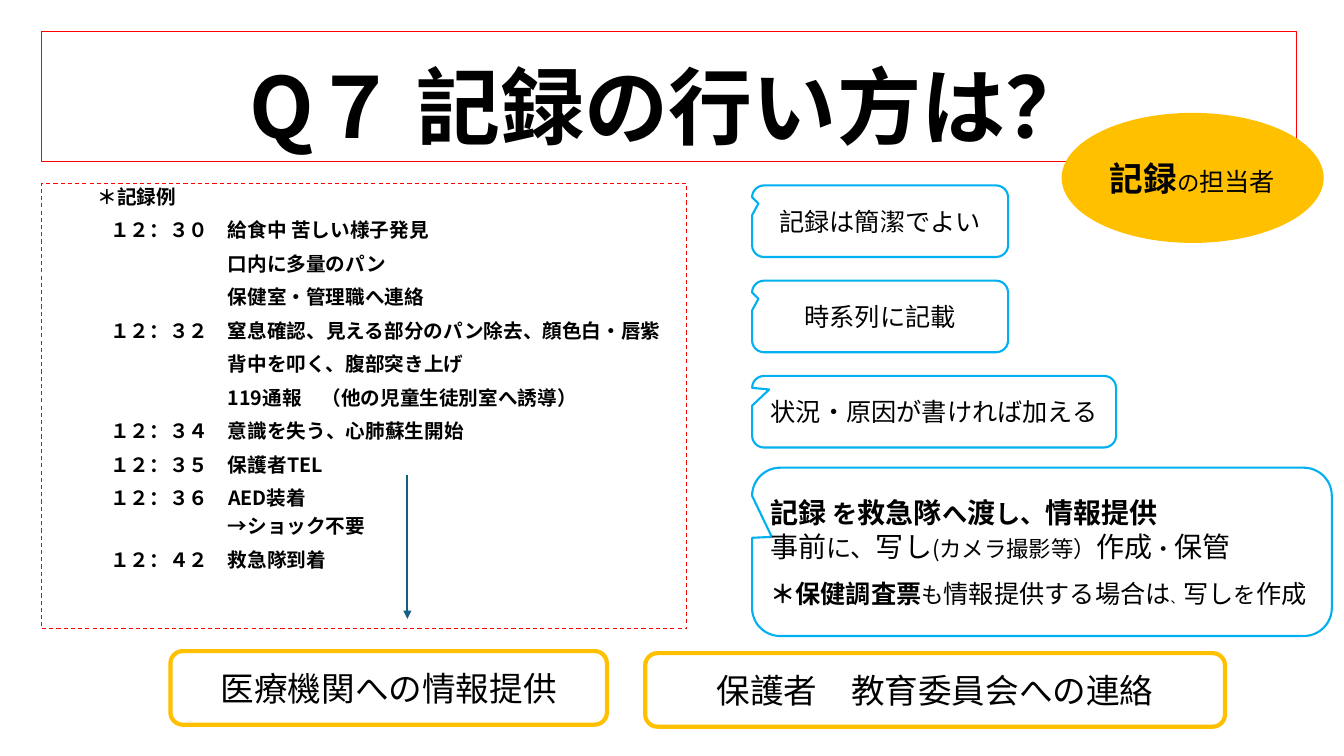
from lxml import etree
from pptx import Presentation
from pptx import util as u
from pptx.dml.color import RGBColor
from pptx.enum import dml, shapes, text
from pptx.oxml.ns import qn

FONT = "Noto Sans CJK JP"
BLACK, WHITE, RED = "000000", "FFFFFF", "FF0000"
AMBER, SKY, NAVY = "FFC000", "00B0F0", "156082"
SLIDE_W, SLIDE_H = u.Inches(13.33), u.Inches(7.5)
KIND = shapes.MSO_SHAPE
LEFT, CENTER = text.PP_ALIGN.LEFT, text.PP_ALIGN.CENTER
TOP, MIDDLE, BOTTOM = (text.MSO_ANCHOR.TOP, text.MSO_ANCHOR.MIDDLE,
                       text.MSO_ANCHOR.BOTTOM)

# Record log: (time, entry); an entry without a time continues the one above
LOG_SIZE = 14
LOG = [
    ("１２：３０", "給食中 苦しい様子発見"),
    ("", "口内に多量のパン"),
    ("", "保健室・管理職へ連絡"),
    ("１２：３２", "窒息確認、見える部分のパン除去、顔色白・唇紫"),
    ("", "背中を叩く、腹部突き上げ"),
    ("", "119通報　（他の児童生徒別室へ誘導）"),
    ("１２：３４", "意識を失う、心肺蘇生開始"),
    ("１２：３５", "保護者TEL"),
    ("１２：３６", "AED装着"),
    ("", "→ショック不要"),
    ("１２：４２", "救急隊到着"),
]

# Short tips: (text, width, pointer tip)
TIPS = [
    ("記録は簡潔でよい", 19.05, (-0.475, -0.248)),
    ("時系列に記載", 19.05, (-0.475, -0.248)),
    ("状況・原因が書ければ加える", 27.08, (-0.453, -0.31)),
]

# Handover callout: lines of (text, size, bold)
HANDOVER = [
    [("記録 ", 20, True), ("を", 18, True), ("救急隊", 20, True),
     ("へ", 18, True), ("渡", 20, True), ("し、", 18, True),
     ("情報提供", 20, True)],
    [("事前", 20, False), ("に、", 18, False), ("写し", 20, False),
     ("(カメラ撮影等）", 16, False), ("作成", 20, False),
     ("・", 16, False), ("保管", 20, False)],
    [("＊保健調査票", 18, True), ("も", 16, False),
     ("情報提供する場合は", 18, False), ("、", 9, False),
     ("写し", 18, False), ("を", 16, False), ("作成", 18, False)],
]


def color(hex_code):
    return RGBColor.from_string(hex_code)


def across(percent):
    return round(SLIDE_W * percent / 100)


def down(percent):
    return round(SLIDE_H * percent / 100)


def panel(slide, kind, place, fill=None, line=None, width=0.75, anchor=MIDDLE):
    """Preset shape; place is left, top, width, height in percent of the slide."""
    left, top, wide, high = place
    shape = slide.shapes.add_shape(kind, across(left), down(top),
                                   across(wide), down(high))
    shape.shadow.inherit = False
    if fill:
        shape.fill.solid()
        shape.fill.fore_color.rgb = color(fill)
    else:
        shape.fill.background()
    if line:
        shape.line.color.rgb = color(line)
        shape.line.width = u.Pt(width)
    else:
        shape.line.fill.background()
    shape.text_frame.word_wrap = True
    shape.text_frame.vertical_anchor = anchor
    return shape


def write(shape, runs, align=LEFT, first=True):
    """Add one paragraph, run by run, and return it."""
    frame = shape.text_frame
    paragraph = frame.paragraphs[0] if first else frame.add_paragraph()
    paragraph.alignment = align
    for words, size, bold in runs:
        run = paragraph.add_run()
        run.text = words
        run.font.name = FONT
        run.font.size = u.Pt(size)
        run.font.bold = bold
        run.font.color.rgb = color(BLACK)
        east_asian = etree.SubElement(run.font._element, qn("a:ea"))
        east_asian.set("typeface", FONT)
    return paragraph


def callout(slide, place, tip):
    shape = panel(slide, KIND.ROUNDED_RECTANGULAR_CALLOUT, place, WHITE, SKY, 1.5)
    for index, value in enumerate((*tip, 0.167)):
        shape.adjustments[index] = value
    return shape


def time_arrow(slide, x, top, bottom):
    arrow = slide.shapes.add_connector(shapes.MSO_CONNECTOR.STRAIGHT, across(x),
                                       down(top), across(x), down(bottom))
    arrow.line.color.rgb = color(NAVY)
    arrow.line.width = u.Pt(1.5)
    outline = arrow.line._get_or_add_ln()
    etree.SubElement(outline, qn("a:tailEnd")).set("type", "triangle")
    etree.SubElement(arrow._element.spPr, qn("a:effectLst"))


def indent(paragraph, points):
    properties = paragraph._p.get_or_add_pPr()
    properties.set("marL", str(u.Pt(points)))
    properties.set("indent", "0")


def record_log(slide):
    box = panel(slide, KIND.RECTANGLE, (3.08, 24.27, 48.01, 58.93),
                line=RED, anchor=TOP)
    box.line.dash_style = dml.MSO_LINE.DASH
    heading = write(box, [("＊記録例", LOG_SIZE, True)])
    heading.line_spacing = 0.83
    indent(heading, 33)
    for time, entry in LOG:
        words = f"{time}　{entry}" if time else entry
        row = write(box, [(words, LOG_SIZE, True)], first=False)
        indent(row, LOG_SIZE * (3 if time else 9))
        row.space_before = u.Pt(10)
        row.line_spacing = u.Pt(10) if entry.startswith("→") else 0.83


def main():
    deck = Presentation()
    deck.slide_width, deck.slide_height = SLIDE_W, SLIDE_H
    slide = deck.slides.add_slide(deck.slide_layouts[6])

    # Title
    title = panel(slide, KIND.RECTANGLE, (3.08, 4.13, 93.4, 17.2),
                  line=RED, anchor=BOTTOM)
    write(title, [("Q７ 記録の行い方は？", 60, True)], CENTER).line_spacing = 0.9

    # Person in charge
    recorder = panel(slide, KIND.OVAL, (78.99, 14.93, 19.5, 17.2), AMBER)
    recorder.text_frame.margin_right = 0
    write(recorder, [("記録", 24, True), ("の", 16, False), ("担当者", 18, False)])

    # Who is informed afterwards
    for words, place in (
        ("保護者　教育委員会への連絡", (48.01, 86.4, 43.14, 9.73)),
        ("医療機関への情報提供", (12.68, 86.13, 32.48, 9.73)),
    ):
        contact = panel(slide, KIND.ROUNDED_RECTANGLE, place, WHITE, AMBER, 3)
        write(contact, [(words, 24, False)], CENTER)

    # Sample record
    record_log(slide)
    time_arrow(slide, 30.31, 62.8, 81.87)

    # Tips
    for row, (words, wide, tip) in enumerate(TIPS):
        bubble = callout(slide, (55.96, 24.53 + 12.6 * row, wide, 9.47), tip)
        write(bubble, [(words, 18, False)], CENTER)

    # Handover to the ambulance crew
    handover = callout(slide, (55.96, 61.87, 43.14, 22.27), (-0.466, -0.089))
    for number, runs in enumerate(HANDOVER):
        line = write(handover, runs, first=number == 0)
    line.line_spacing = 1.5

    deck.save("out.pptx")


if __name__ == "__main__":
    main()
